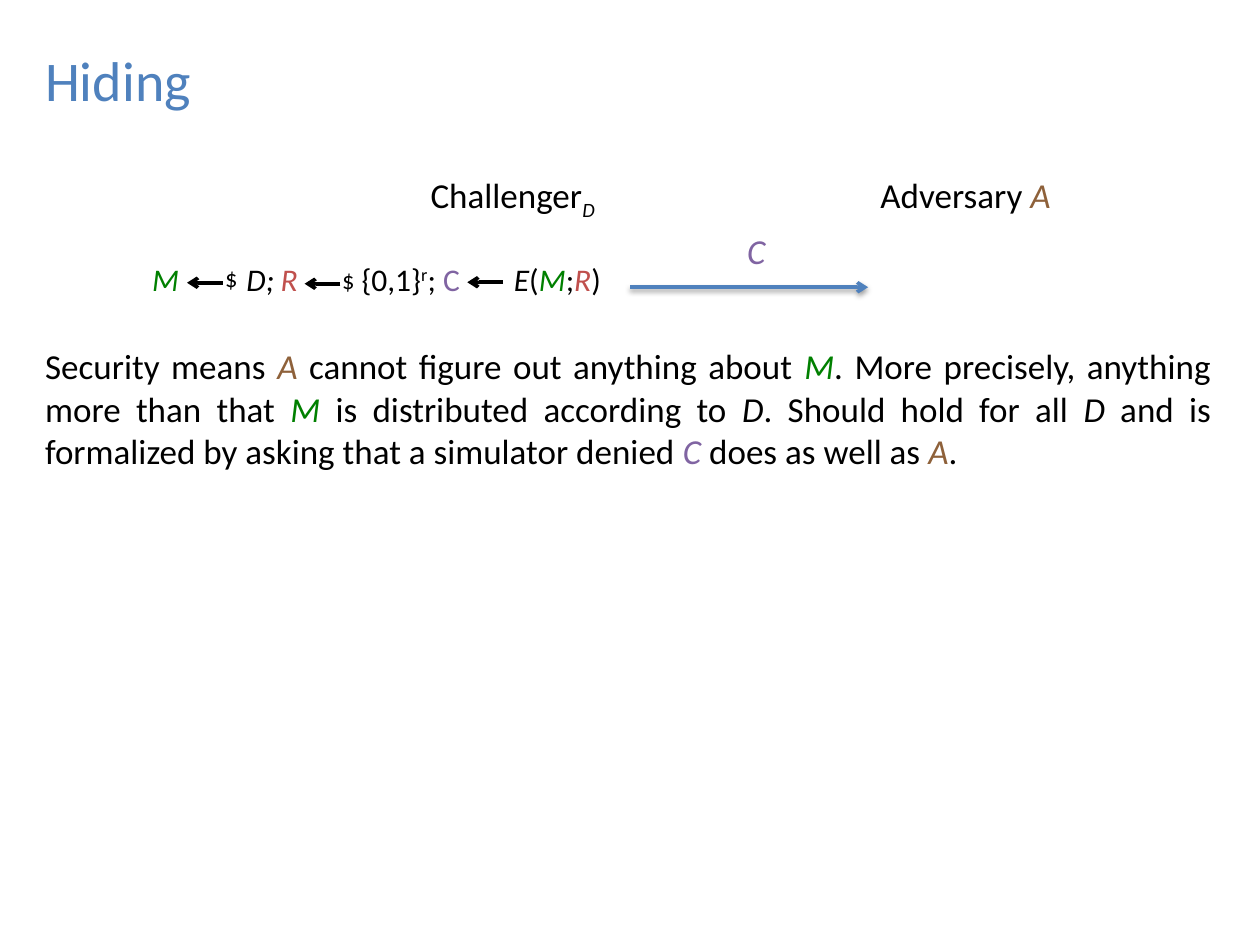
from lxml import etree
from pptx import Presentation
from pptx.dml.color import RGBColor
from pptx.enum.shapes import MSO_CONNECTOR
from pptx.enum.text import MSO_ANCHOR, PP_ALIGN
from pptx.oxml.ns import qn
from pptx.util import Cm, Pt

STRAIGHT = MSO_CONNECTOR.STRAIGHT
TOP, MIDDLE = MSO_ANCHOR.TOP, MSO_ANCHOR.MIDDLE
LEFT, JUSTIFY = PP_ALIGN.LEFT, PP_ALIGN.JUSTIFY

FONT = "Calibri"
BLACK, BLUE, PURPLE = "000000", "4F81BD", "8064A2"

# Text runs: (text, colour, italic, baseline in percent)
ADVERSARY = ("A", "8E613A", True, 0)
MESSAGE = ("M", "008000", True, 0)
RANDOMNESS = ("R", "C0504D", True, 0)
COMMITMENT = ("C", PURPLE, True, 0)
DISTRIBUTION = ("D", BLACK, True, 0)


def plain(text, colour=BLACK, baseline=0):
    return text, colour, False, baseline


def rgb(value):
    return RGBColor.from_string(value)


class SlideBuilder:
    def __init__(self, slide):
        self.slide = slide

    def text(self, left, top, width, height, runs, size, align=LEFT, anchor=TOP):
        shape = self.slide.shapes.add_textbox(Cm(left), Cm(top), Cm(width), Cm(height))
        frame = shape.text_frame
        frame.word_wrap = True
        frame.vertical_anchor = anchor
        paragraph = frame.paragraphs[0]
        paragraph.alignment = align
        for content, colour, italic, baseline in runs:
            run = paragraph.add_run()
            run.text = content
            font = run.font
            font.name, font.size, font.italic = FONT, Pt(size), italic
            font.color.rgb = rgb(colour)
            if baseline:
                run._r.get_or_add_rPr().set("baseline", str(baseline * 1000))

    def arrow(self, start, end, y, colour, shadow=False):
        line = self.slide.shapes.add_connector(STRAIGHT, Cm(start), Cm(y), Cm(end), Cm(y))
        line.line.color.rgb = rgb(colour)
        line.line.width = Pt(2)
        etree.SubElement(line.line._get_or_add_ln(), qn("a:tailEnd"), type="arrow")
        effects = etree.SubElement(line._element.spPr, qn("a:effectLst"))
        if shadow:
            outer = etree.SubElement(
                effects, qn("a:outerShdw"), blurRad=str(Pt(3.1)), dist=str(Pt(1.6)),
                dir="5400000", rotWithShape="0")
            black = etree.SubElement(outer, qn("a:srgbClr"), val=BLACK)
            etree.SubElement(black, qn("a:alpha"), val="38000")


def main():
    presentation = Presentation()
    presentation.slide_width, presentation.slide_height = Cm(25.4), Cm(19.05)
    builder = SlideBuilder(presentation.slides.add_slide(presentation.slide_layouts[6]))

    builder.text(0.66, 0, 17.86, 3.18, [plain("Hiding", BLUE)], 32, anchor=MIDDLE)

    builder.arrow(12.7, 17.5, 5.79, BLUE, shadow=True)
    builder.text(14.81, 4.5, 1.37, 1.11, [COMMITMENT], 20)
    builder.text(8.43, 3.38, 4.67, 1.11,
                 [plain("Challenger"), ("D", BLACK, True, -25)], 20)
    builder.text(17.5, 3.38, 5.74, 1.11, [plain("Adversary "), ADVERSARY], 20)

    builder.text(0.66, 6.83, 24, 3.58, [
        plain("Security means "), ADVERSARY,
        plain(" cannot figure out anything about "), MESSAGE,
        plain(". More precisely, anything more than that "), MESSAGE,
        plain(" is distributed according to "), DISTRIBUTION,
        plain(". Should hold for all "), DISTRIBUTION,
        plain(" and is formalized by asking that a simulator denied "), COMMITMENT,
        plain(" does as well as "), ADVERSARY, plain("."),
    ], 20, align=JUSTIFY)

    formula_parts = [
        (2.82, 0.94, [MESSAGE]),
        (4.72, 1.37, [("D;", BLACK, True, 0)]),
        (5.41, 0.81, [RANDOMNESS]),
        (7.04, 2.69, [plain("{0,1}"), plain("r", baseline=30), plain("; "),
                      plain("C", PURPLE)]),
        (10.11, 2.36, [("E", BLACK, True, 0), plain("("), MESSAGE, plain(";"),
                       RANDOMNESS, plain(")")]),
    ]
    for left, width, runs in formula_parts:
        builder.text(left, 5.11, width, 1.02, runs, 18)

    for left, top in ((4.29, 5.18), (6.65, 5.21)):
        builder.text(left, top, 0.76, 0.86, [plain("$")], 14)
    for tip, y in ((3.77, 5.7), (6.14, 5.72), (9.42, 5.69)):
        builder.arrow(tip + 0.72, tip, y, BLACK)

    presentation.save("out.pptx")


if __name__ == "__main__":
    main()
